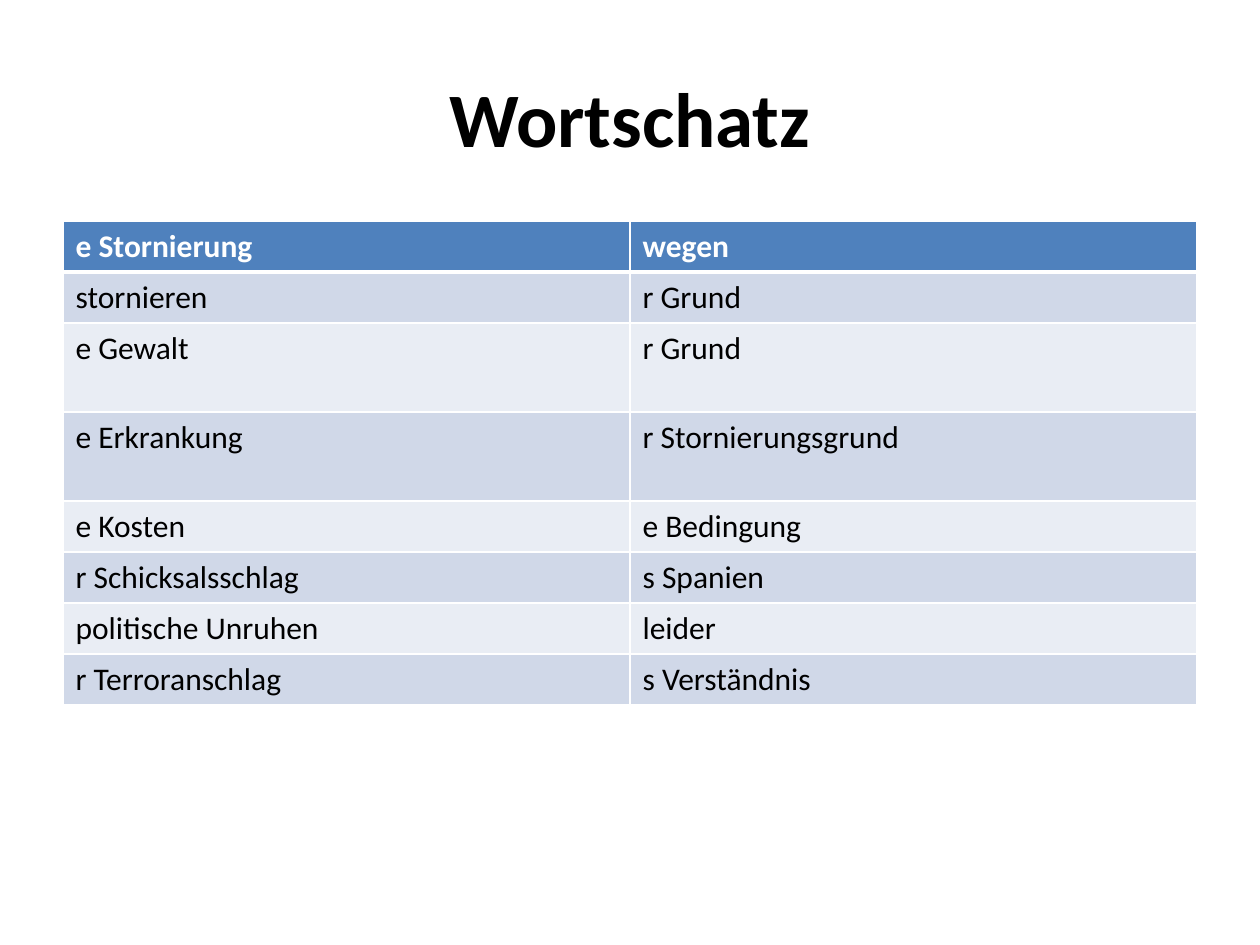
from dataclasses import dataclass

from lxml import etree
from pptx import Presentation
from pptx.dml.color import RGBColor
from pptx.enum.text import MSO_ANCHOR, PP_ALIGN
from pptx.oxml.ns import qn
from pptx.util import Emu, Pt

MIDDLE = MSO_ANCHOR.MIDDLE
CENTER = PP_ALIGN.CENTER
SCALE = 914400 / 126


@dataclass(frozen=True)
class Theme:
    font: str = "Calibri"
    title: int = 44
    body: int = 18
    ink: str = "000000"
    paper: str = "FFFFFF"
    head: str = "4F81BD"
    bands: tuple = ("D0D8E8", "E9EDF4")
    thin: int = 1
    thick: int = 3


THEME = Theme()
WORDS = [
    ("e Stornierung", "wegen"),
    ("stornieren", "r Grund"),
    ("e Gewalt", "r Grund"),
    ("e Erkrankung", "r Stornierungsgrund"),
    ("e Kosten", "e Bedingung"),
    ("r Schicksalsschlag", "s Spanien"),
    ("politische Unruhen", "leider"),
    ("r Terroranschlag", "s Verständnis"),
]
ROW, TALL = 51, 89
TALL_ROWS = (2, 3)


def px(n):
    return Emu(round(n * SCALE))


def write(frame, text, size, color, bold):
    para = frame.paragraphs[0]
    para.text = text
    font = para.font
    font.name, font.size, font.bold = THEME.font, Pt(size), bold
    font.color.rgb = RGBColor.from_string(color)
    return para


def add_title(slide, box, text):
    frame = slide.shapes.add_textbox(*map(px, box)).text_frame
    frame.word_wrap = True
    frame.vertical_anchor = MIDDLE
    write(frame, text, THEME.title, THEME.ink, True).alignment = CENTER


def set_edges(cell, top, bottom):
    """Draw the cell's borders; top and bottom are widths in points."""
    props = cell._tc.get_or_add_tcPr()
    widths = {"L": THEME.thin, "R": THEME.thin, "T": top, "B": bottom}
    for side, width in widths.items():
        line = etree.SubElement(props, qn(f"a:ln{side}"), w=str(Pt(width)))
        fill = etree.SubElement(line, qn("a:solidFill"))
        etree.SubElement(fill, qn("a:srgbClr"), val=THEME.paper)


def add_words(slide, box, words):
    """Fill the box with a word table: a header row, then banded rows."""
    heights = [TALL if r in TALL_ROWS else ROW for r in range(len(words))]
    left, top, width = box
    area = map(px, (left, top, width, sum(heights)))
    table = slide.shapes.add_table(len(words), len(words[0]), *area).table
    for col in table.columns:
        col.width = px(width / len(words[0]))
    for r, pair in enumerate(words):
        table.rows[r].height = px(heights[r])
        head = r == 0
        fill = THEME.head if head else THEME.bands[(r - 1) % 2]
        ink = THEME.paper if head else THEME.ink
        for c, word in enumerate(pair):
            cell = table.cell(r, c)
            write(cell.text_frame, word, THEME.body, ink, head)
            set_edges(cell, THEME.thick if r == 1 else THEME.thin,
                      THEME.thick if head else THEME.thin)
            cell.fill.solid()
            cell.fill.fore_color.rgb = RGBColor.from_string(fill)


def main():
    deck = Presentation()
    deck.slide_width, deck.slide_height = px(1260), px(945)
    slide = deck.slides.add_slide(deck.slide_layouts[6])
    add_title(slide, (63, 38, 1134, 157), "Wortschatz")
    add_words(slide, (63, 221, 1134), WORDS)
    deck.save("out.pptx")


if __name__ == "__main__":
    main()
